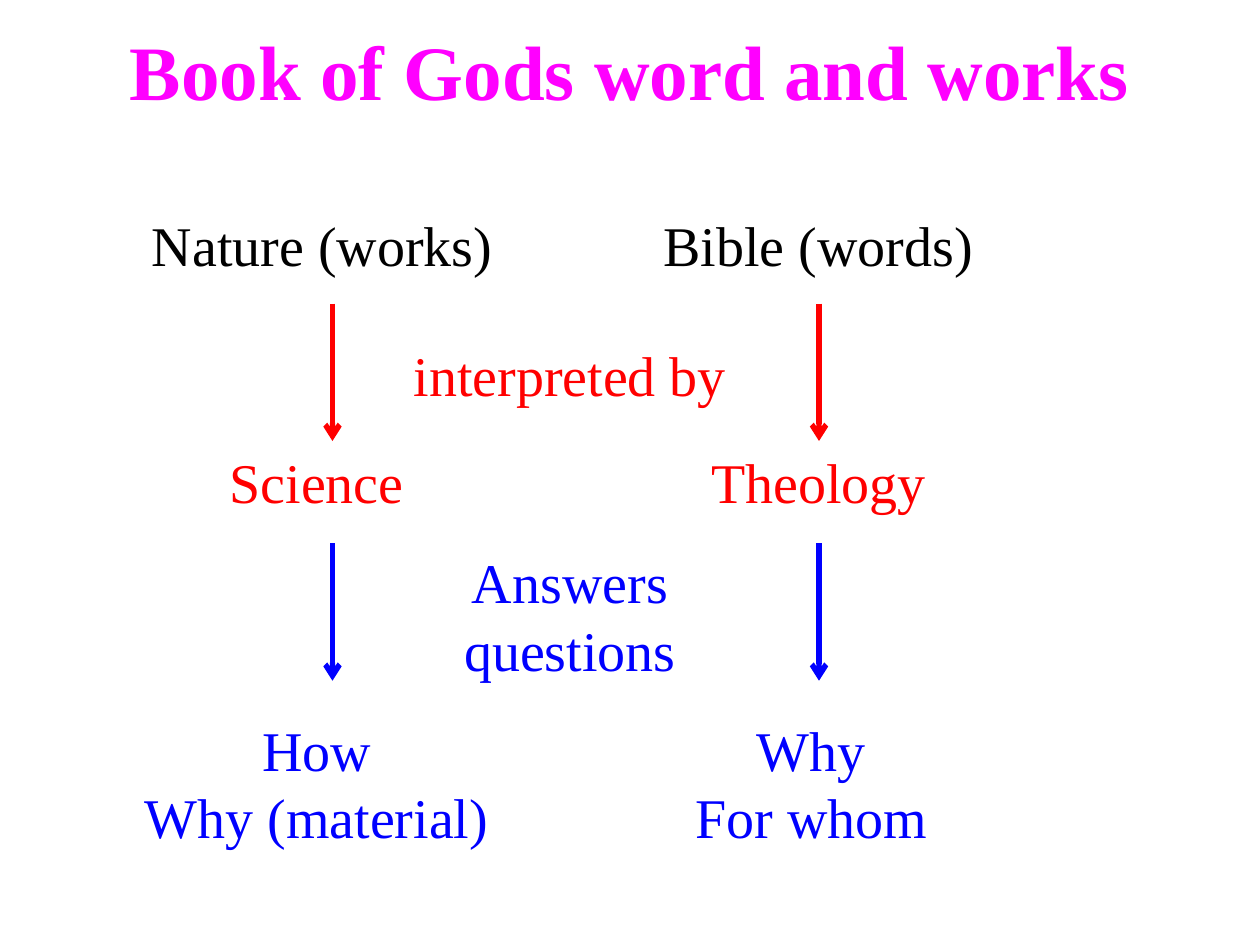
"""Build the slide that sets the book of works beside the book of words."""
from lxml.etree import SubElement as Sub
from pptx import Presentation
from pptx.dml.color import RGBColor as RGB
from pptx.enum.shapes import MSO_CONNECTOR as Conn
from pptx.enum.text import MSO_ANCHOR as Anchor, MSO_AUTO_SIZE as Auto, PP_ALIGN as Align
from pptx.oxml.ns import qn
from pptx.util import Pt

theme = {
    "font": "Times New Roman",
    "head": RGB(255, 0, 255),
    "text": RGB(0, 0, 0),
    "red": RGB(255, 0, 0),
    "blue": RGB(0, 0, 255),
    "big": 44,
    "size": 32,
}


def put(shape, box, text, color="text", size="size", bold=False, fit=Auto.SHAPE_TO_FIT_TEXT):
    """Place a shape and give it centred text."""
    shape.left, shape.top, shape.width, shape.height = map(Pt, box)
    frame = shape.text_frame
    frame.word_wrap, frame.auto_size = True, fit
    frame.vertical_anchor = Anchor.TOP
    para = frame.paragraphs[0]
    para.alignment = Align.CENTER
    run = para.add_run()
    run.text = text
    style(run, color, size, bold)
    return frame


def style(run, color, size="size", bold=False):
    """Set the type of a run."""
    font = run.font
    font.name, font.size, font.bold = theme["font"], Pt(theme[size]), bold
    font.color.rgb = theme[color]


deck = Presentation()
deck.slide_width, deck.slide_height = Pt(720), Pt(540)
slide = deck.slides.add_slide(deck.slide_layouts[5])
shapes = slide.shapes

put(shapes.title, (54, 10, 612, 90), "Book of Gods word and works",
    color="head", size="big", bold=True, fit=Auto.NONE)

wide, high = 215.5, 46
cols = [
    (76.5, 31, 300, 190, "Nature (works)", "Science", ["How", "Why (material)"]),
    (360, 360, wide, 468, "Bible (words)", "Theology", ["Why ", "For whom "]),
]
for left, low, span, mid, book, field, asks in cols:
    put(shapes.add_textbox(0, 0, 0, 0), (left, 116.5, wide, high), book)
    frame = put(shapes.add_textbox(0, 0, 0, 0), (low, 252, span, 240), field, color="red")
    for row, ask in enumerate(asks):
        para = frame.add_paragraph()
        para.alignment = Align.CENTER
        para.space_before = Pt(0 if row else 115)
        run = para.add_run()
        run.text = ask
        style(run, "blue")
    for top, color in [(173.5, "red"), (310.5, "blue")]:
        line = shapes.add_connector(Conn.STRAIGHT, Pt(mid), Pt(top), Pt(mid), Pt(top + 78.5))
        line.line.width = Pt(3)
        line.line.color.rgb = theme[color]
        Sub(line.line._get_or_add_ln(), qn("a:tailEnd"), type="arrow")
        Sub(line._element.spPr, qn("a:effectLst"))

for top, tall, text, color in [
    (191, high, "interpreted by", "red"),
    (309.5, 85, "Answers questions", "blue"),
]:
    put(shapes.add_textbox(0, 0, 0, 0), (218, top, wide, tall), text, color=color)

deck.save("out.pptx")
